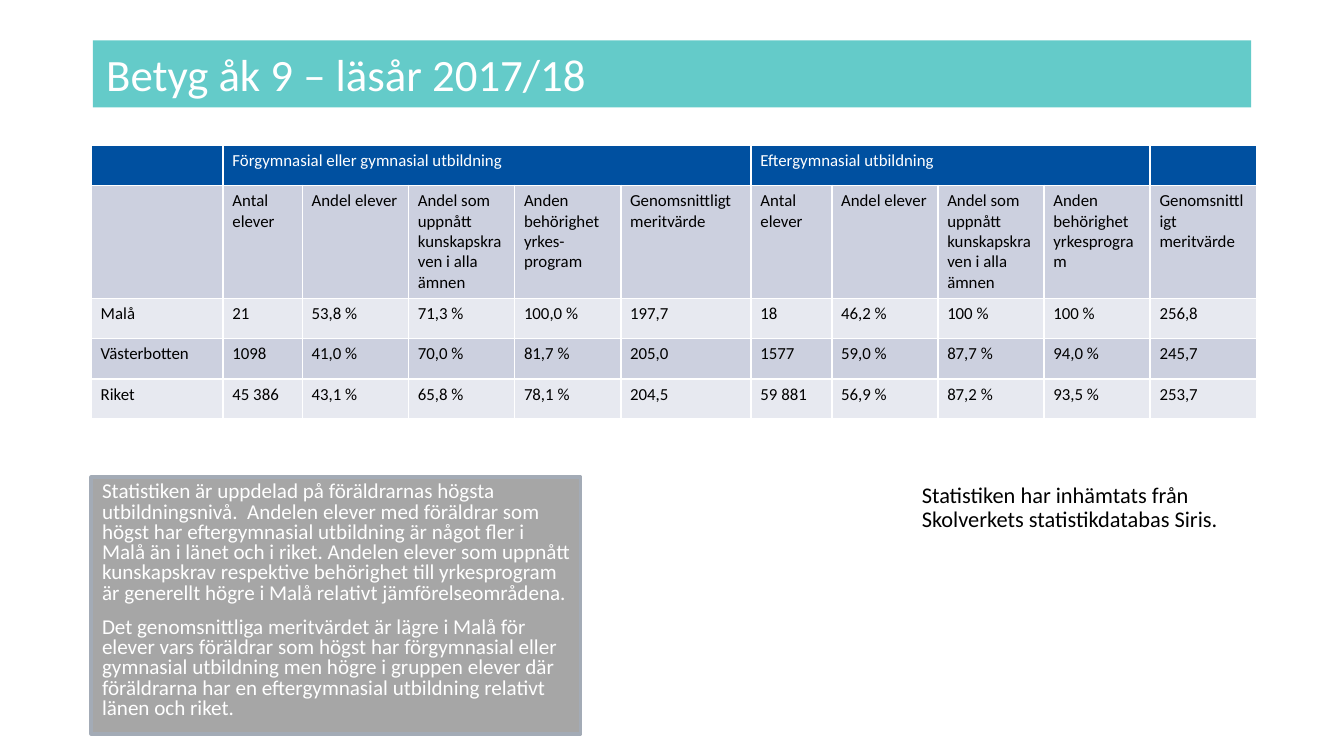
import pptx
import pptx.dml.color
import pptx.enum.shapes
import pptx.enum.text
import pptx.oxml
import pptx.oxml.ns
import pptx.util
from pptx.util import Inches

COLORS = {
    "title": "64CBC9", "header": "0050A0", "band": "CCD0DF", "light_band": "E7E9F0",
    "comment": "A6A6A6", "comment_edge": "A3ABB6", "white": "FFFFFF", "black": "000000",
}


def rgb(name):
    return pptx.dml.color.RGBColor.from_string(COLORS[name])


def style(paragraph, size, color):
    paragraph.alignment = pptx.enum.text.PP_ALIGN.LEFT
    paragraph.font.name = "Calibri"
    paragraph.font.size = pptx.util.Pt(size)
    paragraph.font.color.rgb = rgb(color)


presentation = pptx.Presentation()
presentation.slide_width = Inches(10)
presentation.slide_height = Inches(10 * 9 / 16)
slide = presentation.slides.add_slide(presentation.slide_layouts[5])

# Title band
title = slide.shapes.title
title.left, title.top, title.width, title.height = map(Inches, (0.69, 0.3, 8.62, 0.5))
title.fill.solid()
title.fill.fore_color.rgb = rgb("title")
title.text_frame.text = "Betyg åk 9 – läsår 2017/18"
title.text_frame.auto_size = pptx.enum.text.MSO_AUTO_SIZE.NONE
title.text_frame.vertical_anchor = pptx.enum.text.MSO_ANCHOR.MIDDLE
style(title.text_frame.paragraphs[0], 24, "white")

# Grades by the parents' level of education
requirements = "Andel som uppnått kunskapskraven i alla ämnen"
merit = "Genomsnittligt meritvärde"
rows = [
    ["", "Förgymnasial eller gymnasial utbildning", "", "", "", "",
     "Eftergymnasial utbildning", "", "", "", ""],
    ["", "Antal elever", "Andel elever", requirements, "Anden behörighet yrkes-program", merit,
     "Antal elever", "Andel elever", requirements, "Anden behörighet yrkesprogram", merit],
    ["Malå", "21", "53,8 %", "71,3 %", "100,0 %", "197,7",
     "18", "46,2 %", "100 %", "100 %", "256,8"],
    ["Västerbotten", "1098", "41,0 %", "70,0 %", "81,7 %", "205,0",
     "1577", "59,0 %", "87,7 %", "94,0 %", "245,7"],
    ["Riket", "45 386", "43,1 %", "65,8 %", "78,1 %", "204,5",
     "59 881", "56,9 %", "87,2 %", "93,5 %", "253,7"],
]
column_widths = [0.98, 0.59, 0.79, 0.79, 0.79, 0.97, 0.6, 0.79, 0.79, 0.79, 0.79]
row_heights = [0.3, 0.83, 0.3, 0.3, 0.3]
grades = slide.shapes.add_table(
    len(rows), len(column_widths), Inches(0.68), Inches(1.08), Inches(8.67), Inches(2.04)
).table
for column, width in zip(grades.columns, column_widths):
    column.width = Inches(width)
for row, height in zip(grades.rows, row_heights):
    row.height = Inches(height)

for row_index, row_texts in enumerate(rows):
    is_header = row_index == 0
    fill = "header" if is_header else ("band" if row_index % 2 else "light_band")
    for column_index, text in enumerate(row_texts):
        cell = grades.cell(row_index, column_index)
        cell.text = text
        cell.margin_left = cell.margin_right = Inches(0.07)
        cell.margin_top = cell.margin_bottom = Inches(0.04)
        cell.fill.solid()
        cell.fill.fore_color.rgb = rgb(fill)
        paragraph = cell.text_frame.paragraphs[0]
        style(paragraph, 9, "white" if is_header else "black")
        if not text:
            paragraph._p.get_or_add_endParaRPr().set("sz", "900")
        for position, side in enumerate(("L", "R", "T", "B")):
            border = pptx.oxml.parse_xml(
                f'<a:ln{side} {pptx.oxml.ns.nsdecls("a")} w="{pptx.util.Pt(1)}">'
                f'<a:solidFill><a:srgbClr val="{COLORS["white"]}"/></a:solidFill></a:ln{side}>'
            )
            cell._tc.get_or_add_tcPr().insert(position, border)
grades.cell(0, 1).merge(grades.cell(0, 5))
grades.cell(0, 6).merge(grades.cell(0, 9))

# Source of the statistics
source = slide.shapes.add_textbox(Inches(6.76), Inches(3.55), Inches(2.59), Inches(1.09))
source.text_frame.word_wrap = True
source.text_frame.text = "Statistiken har inhämtats från Skolverkets statistikdatabas Siris."
source.text_frame.paragraphs[0].line_spacing = 0.9
style(source.text_frame.paragraphs[0], 12, "black")

# Comment on the results
comment = slide.shapes.add_shape(
    pptx.enum.shapes.MSO_SHAPE.RECTANGLE, Inches(0.68), Inches(3.55), Inches(3.64), Inches(1.91)
)
comment.shadow.inherit = False
comment.fill.solid()
comment.fill.fore_color.rgb = rgb("comment")
comment.line.color.rgb = rgb("comment_edge")
comment.line.width = pptx.util.Pt(2)
frame = comment.text_frame
frame.word_wrap = True
frame.vertical_anchor = pptx.enum.text.MSO_ANCHOR.TOP
frame.margin_left = frame.margin_right = Inches(0.08)
frame.margin_top = frame.margin_bottom = Inches(0.04)
frame.text = "\n".join([
    "Statistiken är uppdelad på föräldrarnas högsta utbildningsnivå.  Andelen elever med "
    "föräldrar som högst har eftergymnasial utbildning är något fler i Malå än i länet och i "
    "riket. Andelen elever som uppnått kunskapskrav respektive behörighet till yrkesprogram "
    "är generellt högre i Malå relativt jämförelseområdena.",
    "Det genomsnittliga meritvärdet är lägre i Malå för elever vars föräldrar som högst har "
    "förgymnasial eller gymnasial utbildning men högre i gruppen elever där föräldrarna har "
    "en eftergymnasial utbildning relativt länen och riket.",
])
for paragraph in frame.paragraphs:
    paragraph.line_spacing = 0.8
    style(paragraph, 11.3, "white")
frame.paragraphs[1].space_before = pptx.util.Pt(7.5)

presentation.save("out.pptx")
